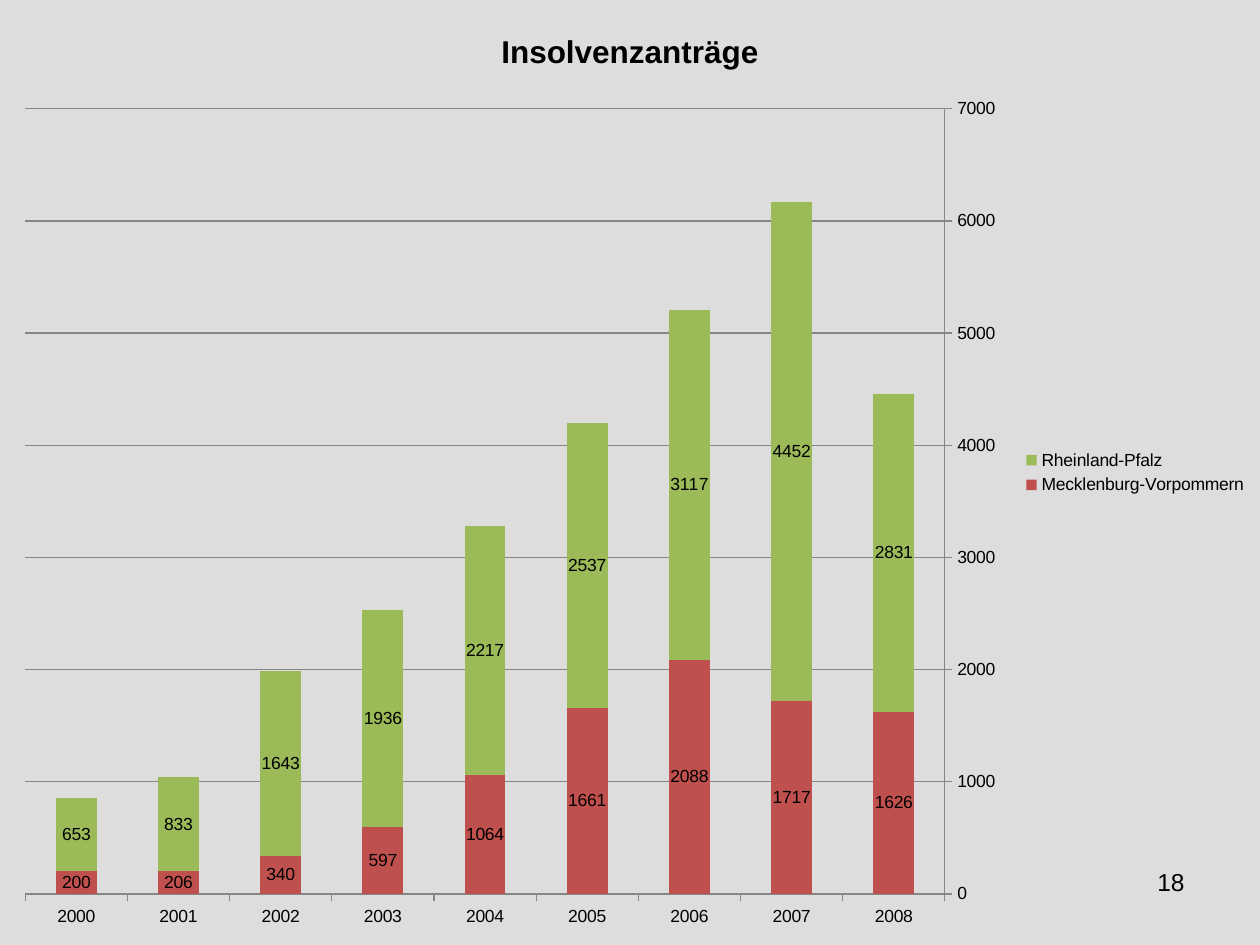
from pptx import Presentation
from pptx.chart.data import CategoryChartData
from pptx.dml.color import RGBColor
from pptx.enum.chart import XL_CHART_TYPE, XL_LEGEND_POSITION, XL_TICK_MARK
from pptx.enum.text import PP_ALIGN
from pptx.util import Inches, Pt

TITLE = "Insolvenzanträge"
PAGE_NUMBER = "18"
YEARS = [str(year) for year in range(2008, 1999, -1)]
STATES = [
    ("Mecklenburg-Vorpommern", "C0504D",
     [1626, 1717, 2088, 1661, 1064, 597, 340, 206, 200]),
    ("Rheinland-Pfalz", "9BBB59",
     [2831, 4452, 3117, 2537, 2217, 1936, 1643, 833, 653]),
]
BLACK, GRID, BACKGROUND = "000000", "868686", "DDDDDD"


def color(value):
    return RGBColor.from_string(value)


def style_font(font, size, bold=False):
    font.name = "Arial"
    font.size = Pt(size)
    font.bold = bold
    font.color.rgb = color(BLACK)


def style_line(line):
    line.color.rgb = color(GRID)
    line.width = Pt(0.75)


deck = Presentation()
deck.slide_width, deck.slide_height = Inches(10), Inches(7.5)
page = deck.slides.add_slide(deck.slide_layouts[6])
page.background.fill.solid()
page.background.fill.fore_color.rgb = color(BACKGROUND)

# Page number
box = page.shapes.add_textbox(Inches(7.17), Inches(6.83), Inches(2.33), Inches(0.52))
box.text_frame.word_wrap = True
para = box.text_frame.paragraphs[0]
para.text = PAGE_NUMBER
para.alignment = PP_ALIGN.RIGHT
style_font(para.font, 14)

# Stacked columns over the whole slide
data = CategoryChartData()
data.categories = YEARS
for name, _, values in STATES:
    data.add_series(name, values)
chart = page.shapes.add_chart(XL_CHART_TYPE.COLUMN_STACKED, 0, 0,
                              deck.slide_width, deck.slide_height, data).chart
style_font(chart.font, 10)

# Title and legend
chart.has_title = True
title = chart.chart_title.text_frame.paragraphs[0]
title.text = TITLE
style_font(title.font, 18, bold=True)
chart.chart_title.include_in_layout = False
chart.has_legend = True
chart.legend.position = XL_LEGEND_POSITION.RIGHT
chart.legend.include_in_layout = False
style_font(chart.legend.font, 10)

# Axes: years run right to left in the data, so the axis is reversed
chart.category_axis.reverse_order = True
chart.value_axis.has_major_gridlines = True
style_line(chart.value_axis.major_gridlines.format.line)
for axis in (chart.category_axis, chart.value_axis):
    axis.major_tick_mark = XL_TICK_MARK.OUTSIDE
    style_line(axis.format.line)
    style_font(axis.tick_labels.font, 10)

# Columns and their values
plot = chart.plots[0]
plot.vary_by_categories = False
plot.gap_width = 150
plot.overlap = 100
for series, (_, fill, _) in zip(plot.series, STATES):
    series.format.fill.solid()
    series.format.fill.fore_color.rgb = color(fill)
    series.data_labels.show_value = True
    style_font(series.data_labels.font, 10)

deck.save("out.pptx")
